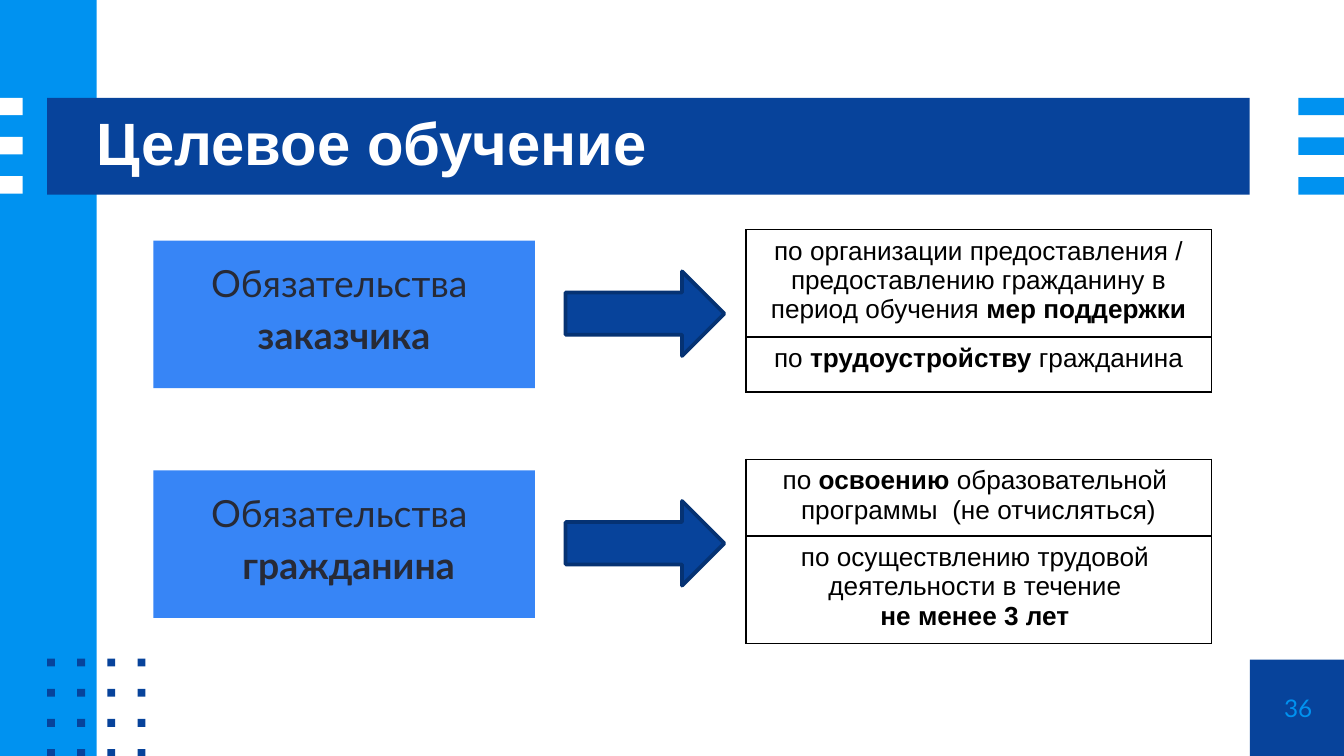
from dataclasses import dataclass
from itertools import product

from lxml.etree import SubElement
from pptx import Presentation
from pptx.dml.color import RGBColor
from pptx.enum.shapes import MSO_SHAPE as Shape
from pptx.enum.text import MSO_ANCHOR as Anchor, MSO_AUTO_SIZE as AutoSize, PP_ALIGN as Align
from pptx.oxml.ns import qn
from pptx.util import Cm, Pt

NAVY = RGBColor(0x07, 0x43, 0x9B)
DARK_NAVY = RGBColor(0x05, 0x32, 0x73)
AZURE = RGBColor(0x00, 0x92, 0xF0)
BLUE = RGBColor(0x37, 0x85, 0xF6)
INK = RGBColor(0x27, 0x2A, 0x36)
WHITE = RGBColor(0xFF, 0xFF, 0xFF)
BLACK = RGBColor(0x00, 0x00, 0x00)

TITLE_FONT = {"name": "Arial", "size": Pt(32), "bold": True}
BOX_FONT = {"name": "Lato", "size": Pt(20)}
CELL_FONT = {"name": "Arial", "size": Pt(14)}
NUMBER_FONT = {"name": "Lato", "size": Pt(13)}


@dataclass
class Run:
    text: str
    bold: bool = False


@dataclass
class Duty:
    """One row of the slide: a heading box, an arrow and a table."""
    top: float
    heading: list[Run]
    row_heights: list[float]
    cells: list[list[Run]]


DUTIES = [
    Duty(4.55, [Run("Обязательства \n"), Run("заказчика", True)], [2.03, 1.04], [
        [Run("по организации предоставления / предоставлению гражданину в период обучения "),
         Run("мер поддержки", True)],
        [Run("по "), Run("трудоустройству ", True), Run("гражданина")],
    ]),
    Duty(8.89, [Run("Обязательства \n"), Run(" гражданина", True)], [1.45, 2.03], [
        [Run("по "), Run("освоению", True),
         Run(" образовательной \nпрограммы  (не отчисляться)")],
        [Run("по осуществлению трудовой \nдеятельности в течение \n"),
         Run("не менее 3 лет ", True)],
    ]),
]


def add_block(slide, left: float, top: float, width: float, height: float,
              color: RGBColor, kind=Shape.RECTANGLE):
    shape = slide.shapes.add_shape(kind, Cm(left), Cm(top), Cm(width), Cm(height))
    shape.shadow.inherit = False
    shape.fill.solid()
    shape.fill.fore_color.rgb = color
    shape.line.fill.background()
    return shape


def set_frame(frame, anchor, margin: float) -> None:
    frame.word_wrap = True
    frame.auto_size = AutoSize.NONE
    frame.vertical_anchor = anchor
    for side in ("left", "right", "top", "bottom"):
        setattr(frame, f"margin_{side}", Cm(margin))


def write_runs(paragraph, runs: list[Run], font_values: dict, color: RGBColor,
               alignment=Align.CENTER) -> None:
    paragraph.alignment = alignment
    for item in runs:
        for index, line in enumerate(item.text.split("\n")):
            if index:
                paragraph.add_line_break()
            if not line:
                continue
            run = paragraph.add_run()
            run.text = line
            for key, value in {"bold": item.bold, **font_values}.items():
                setattr(run.font, key, value)
            run.font.color.rgb = color


def add_borders(cell, color: RGBColor, width: float) -> None:
    properties = cell._tc.get_or_add_tcPr()
    for side in ("a:lnL", "a:lnR", "a:lnT", "a:lnB"):
        border = SubElement(properties, qn(side), w=str(int(Pt(width))))
        fill = SubElement(border, qn("a:solidFill"))
        SubElement(fill, qn("a:srgbClr"), val=str(color))


def add_duty_table(slide, duty: Duty) -> None:
    frame = slide.shapes.add_table(len(duty.cells), 1, Cm(14.1), Cm(duty.top - 0.21),
                                   Cm(8.79), Cm(sum(duty.row_heights)))
    table = frame.table
    table.first_row = table.horz_banding = False
    for row, height, runs in zip(table.rows, duty.row_heights, duty.cells):
        row.height = Cm(height)
        cell = row.cells[0]
        add_borders(cell, BLACK, 0.75)
        cell.fill.background()
        cell.margin_left = cell.margin_right = Cm(0.25)
        cell.margin_top = cell.margin_bottom = Cm(0.13)
        write_runs(cell.text_frame.paragraphs[0], runs, CELL_FONT, BLACK)


def add_duty(slide, duty: Duty) -> None:
    box = add_block(slide, 2.9, duty.top, 7.21, 2.79, BLUE)
    set_frame(box.text_frame, Anchor.TOP, 0.25)
    paragraph = box.text_frame.paragraphs[0]
    paragraph.line_spacing = 1.15
    paragraph.space_before = Pt(6)
    write_runs(paragraph, duty.heading, BOX_FONT, INK)

    arrow = add_block(slide, 10.69, duty.top + 0.58, 3, 1.6, NAVY, Shape.RIGHT_ARROW)
    arrow.line.color.rgb = DARK_NAVY
    arrow.line.width = Pt(2)

    add_duty_table(slide, duty)


def add_decoration(slide) -> None:
    # Side strip and title banner
    add_block(slide, 0, 0, 1.83, 14.29, AZURE)
    add_block(slide, 0.89, 1.85, 22.73, 1.83, NAVY)
    # Three bars at each edge
    for index in range(3):
        add_block(slide, 0, 1.85 + 0.74 * index, 0.43, 0.33, WHITE)
        add_block(slide, 24.54, 1.85 + 0.75 * index, 0.86, 0.33, AZURE)
    # Grid of dots
    for row, column in product(range(4), repeat=2):
        add_block(slide, 0.89 + 0.57 * column, 12.45 + 0.57 * row, 0.15, 0.15, NAVY)


def add_page_number(slide, number: str) -> None:
    block = add_block(slide, 23.62, 12.47, 1.83, 1.83, NAVY)
    set_frame(block.text_frame, Anchor.MIDDLE, 0)
    write_runs(block.text_frame.paragraphs[0], [Run(number)], NUMBER_FONT, AZURE)


def format_title(slide, text: str) -> None:
    title = slide.shapes.title
    title.left, title.top, title.width, title.height = Cm(1.83), Cm(1.85), Cm(21.79), Cm(1.83)
    set_frame(title.text_frame, Anchor.MIDDLE, 0)
    paragraph = title.text_frame.paragraphs[0]
    paragraph.line_spacing = 0.9
    write_runs(paragraph, [Run(text)], TITLE_FONT, WHITE, Align.LEFT)
    # Bring the title in front of its banner
    slide.shapes.element.append(title.element)


def main() -> None:
    presentation = Presentation()
    presentation.slide_width = Cm(25.4)
    presentation.slide_height = Cm(14.29)
    slide = presentation.slides.add_slide(presentation.slide_layouts[5])

    add_decoration(slide)
    add_page_number(slide, "36")
    format_title(slide, "Целевое обучение")
    for duty in DUTIES:
        add_duty(slide, duty)

    presentation.save("out.pptx")


if __name__ == "__main__":
    main()
